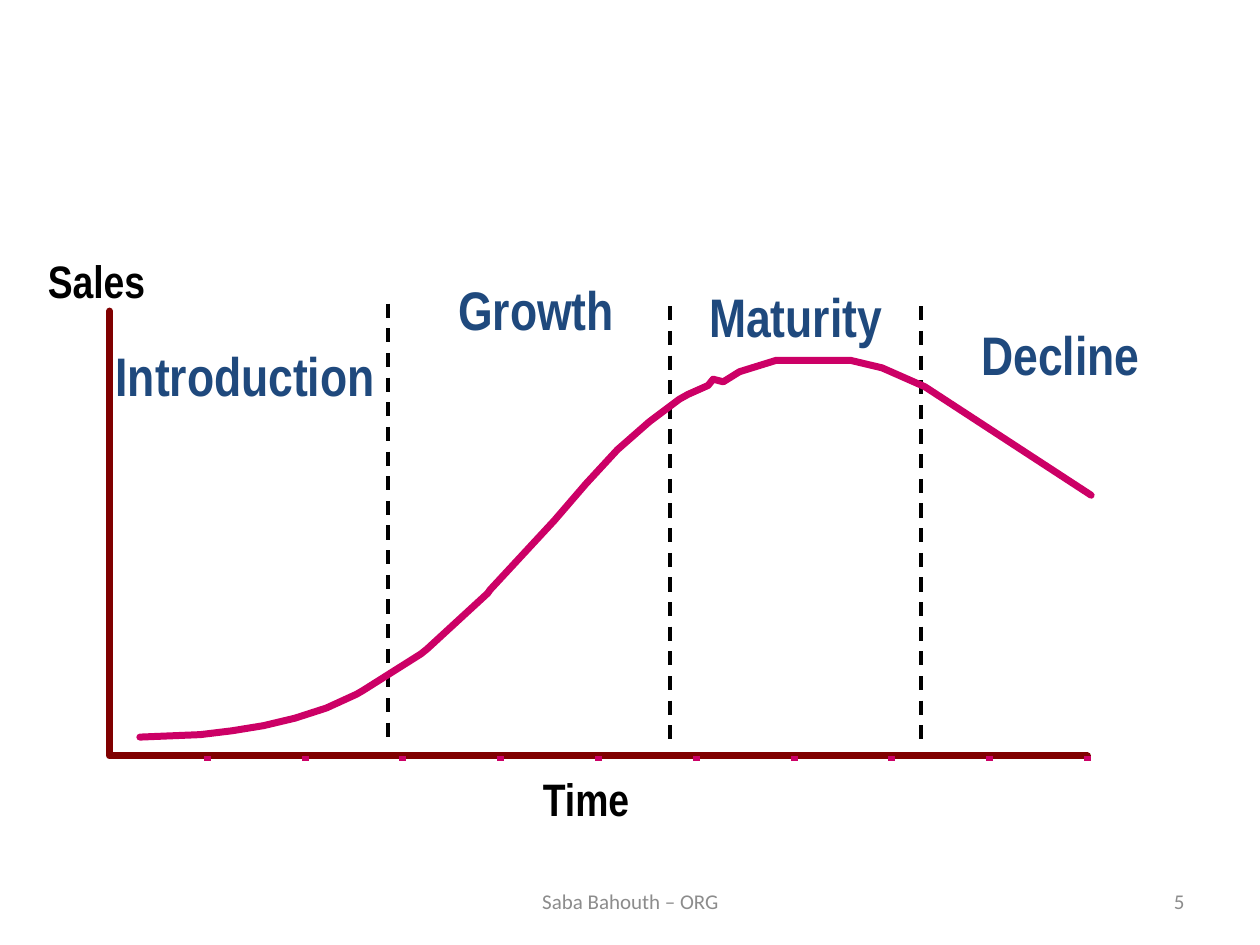
from typing import NamedTuple

import pptx
import pptx.dml.color
import pptx.enum.dml
import pptx.enum.shapes
import pptx.enum.text
import pptx.oxml
import pptx.util
from lxml import etree

Pt = pptx.util.Pt
ALIGN = pptx.enum.text.PP_ALIGN
ANCHOR = pptx.enum.text.MSO_ANCHOR
DASH = pptx.enum.dml.MSO_LINE.DASH

COLORS = {
    "axis": "800000",
    "curve": "CC0066",
    "stage": "1F497D",
    "text": "000000",
    "footer": "8C8C8C",
}

AXIS_LEFT, AXIS_RIGHT = 62.6, 621.4
AXIS_TOP, AXIS_BOTTOM = 177.8, 432
TICKS = 10
TICK_LENGTH = 2.9
DIVIDER_HEIGHT = 249.1

SALES_CURVE = [
    (79.9, 421.2), (114.5, 419.8), (132.5, 417.6), (150.5, 414.7),
    (168.5, 410.4), (186.5, 404.6), (203.8, 396.7), (207.4, 394.6),
    (240.5, 373.7), (244.1, 370.8), (278.6, 339.1), (280.1, 337),
    (316.8, 297.4), (334.8, 276.5), (352.8, 257), (370.8, 241.2),
    (373.7, 239), (388.1, 228.2), (393.1, 225.4), (404.6, 220.3),
    (407.5, 216.7), (413.3, 218.2), (422.6, 212.4), (443.5, 205.9),
    (486, 205.9), (504, 210.2), (528.5, 221), (623.5, 283),
]


class Label(NamedTuple):
    text: str
    left: float
    top: float
    width: float
    height: float
    size: float
    color: str
    font: str = "Arial Narrow"
    bold: bool = True
    align: ALIGN = ALIGN.LEFT
    anchor: ANCHOR = ANCHOR.TOP


class Divider(NamedTuple):
    x: float
    top: float


LABELS = [
    Label("Sales", 20.2, 141.1, 78.5, 38.2, 26, "text"),
    Label("Time", 303.1, 437, 67, 38.2, 26, "text"),
    Label("Introduction", 59, 192.2, 185, 43.2, 31, "stage"),
    Label("Growth", 254.9, 154.1, 105.1, 43.9, 31, "stage"),
    Label("Maturity", 398.2, 158.4, 115.2, 43.2, 31, "stage"),
    Label("Decline", 553.7, 180, 106.6, 43.2, 31, "stage"),
    Label("Saba Bahouth – ORG", 246.2, 500.4, 228.2, 28.8, 12, "footer",
          "Calibri", False, ALIGN.CENTER, ANCHOR.MIDDLE),
    Label("5", 516.2, 500.4, 167.8, 28.8, 12, "footer",
          "Calibri", False, ALIGN.RIGHT, ANCHOR.MIDDLE),
]

DIVIDERS = [Divider(221.8, 173.5), Divider(383, 175), Divider(526.3, 175)]


def rgb(name: str) -> pptx.dml.color.RGBColor:
    return pptx.dml.color.RGBColor.from_string(COLORS[name])


def add_label(s, label: Label) -> None:
    box = s.shapes.add_textbox(
        Pt(label.left), Pt(label.top), Pt(label.width), Pt(label.height))
    tf = box.text_frame
    tf.word_wrap = True
    tf.vertical_anchor = label.anchor
    p = tf.paragraphs[0]
    p.text = label.text
    p.alignment = label.align
    p.font.name = label.font
    p.font.size = Pt(label.size)
    p.font.bold = label.bold
    p.font.color.rgb = rgb(label.color)


def add_line(s, x1: float, y1: float, x2: float, y2: float,
             color: str, width: float):
    line = s.shapes.add_connector(
        pptx.enum.shapes.MSO_CONNECTOR.STRAIGHT, Pt(x1), Pt(y1), Pt(x2), Pt(y2))
    line.line.color.rgb = rgb(color)
    line.line.width = Pt(width)
    etree.SubElement(line._element.spPr, pptx.oxml.ns.qn("a:effectLst"))
    return line


def add_polyline(s, points: list[tuple[float, float]], color: str) -> None:
    """Draw an open, unfilled path with round ends and corners."""
    start, *rest = [(Pt(x), Pt(y)) for x, y in points]
    builder = s.shapes.build_freeform(*start)
    builder.add_line_segments(rest, close=False)
    path = builder.convert_to_shape()
    path.shadow.inherit = False
    path.fill.background()
    path.line.color.rgb = rgb(color)
    path.line.width = Pt(4)
    ln = path.line._get_or_add_ln()
    ln.set("cap", "rnd")
    etree.SubElement(ln, pptx.oxml.ns.qn("a:round"))


def main() -> None:
    prs = pptx.Presentation()
    prs.slide_width, prs.slide_height = Pt(720), Pt(540)
    s = prs.slides.add_slide(prs.slide_layouts[6])

    add_polyline(s, [(AXIS_LEFT, AXIS_TOP), (AXIS_LEFT, AXIS_BOTTOM),
                     (AXIS_RIGHT, AXIS_BOTTOM)], "axis")
    for divider in DIVIDERS:
        line = add_line(s, divider.x, divider.top, divider.x,
                        divider.top + DIVIDER_HEIGHT, "text", 2)
        line.line.dash_style = DASH
    tick_gap = (AXIS_RIGHT - AXIS_LEFT) / TICKS
    for i in range(1, TICKS + 1):
        x = AXIS_LEFT + i * tick_gap
        add_line(s, x, AXIS_BOTTOM, x, AXIS_BOTTOM + TICK_LENGTH, "curve", 4)
    add_polyline(s, SALES_CURVE, "curve")
    for label in LABELS:
        add_label(s, label)

    prs.save("out.pptx")


if __name__ == "__main__":
    main()
